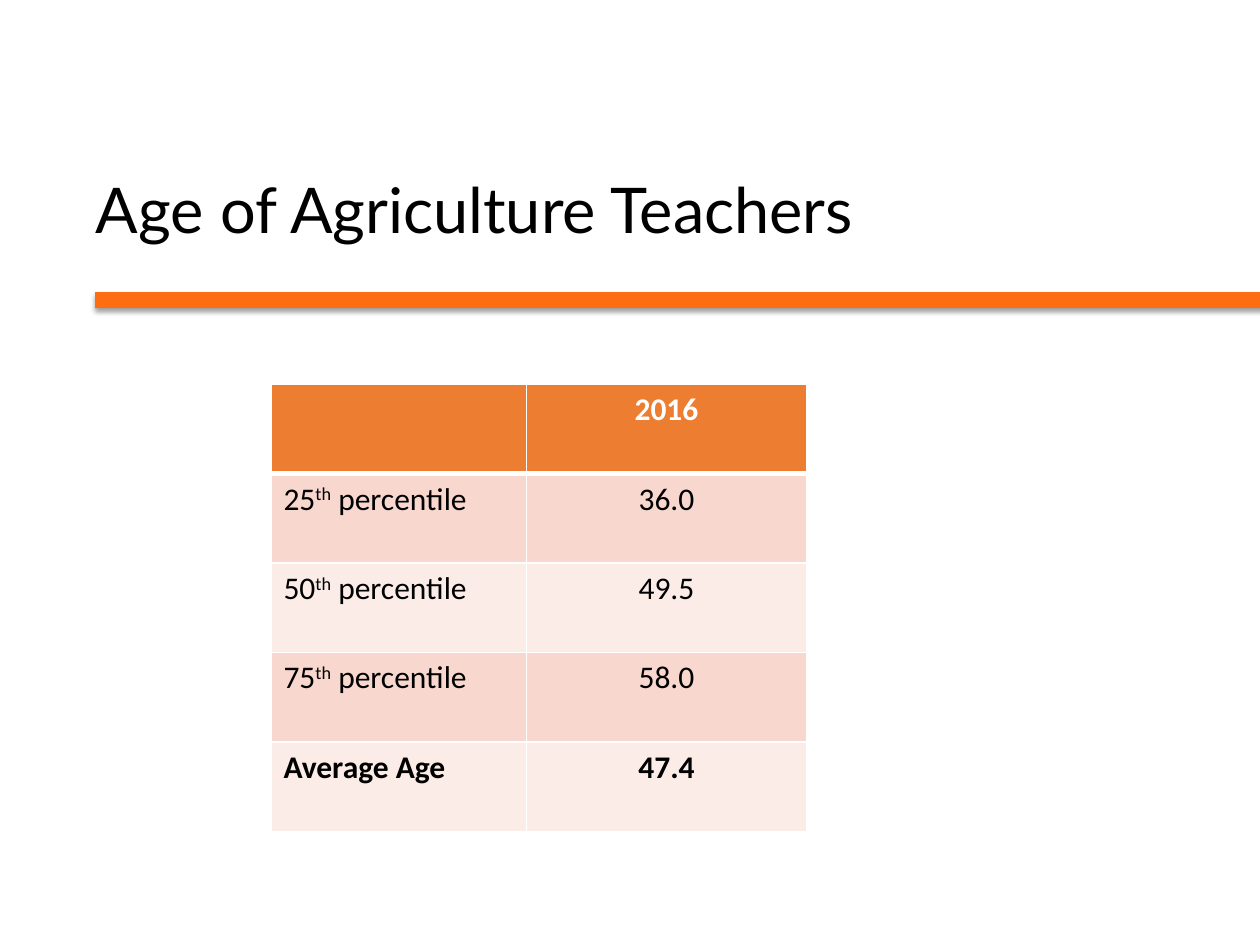
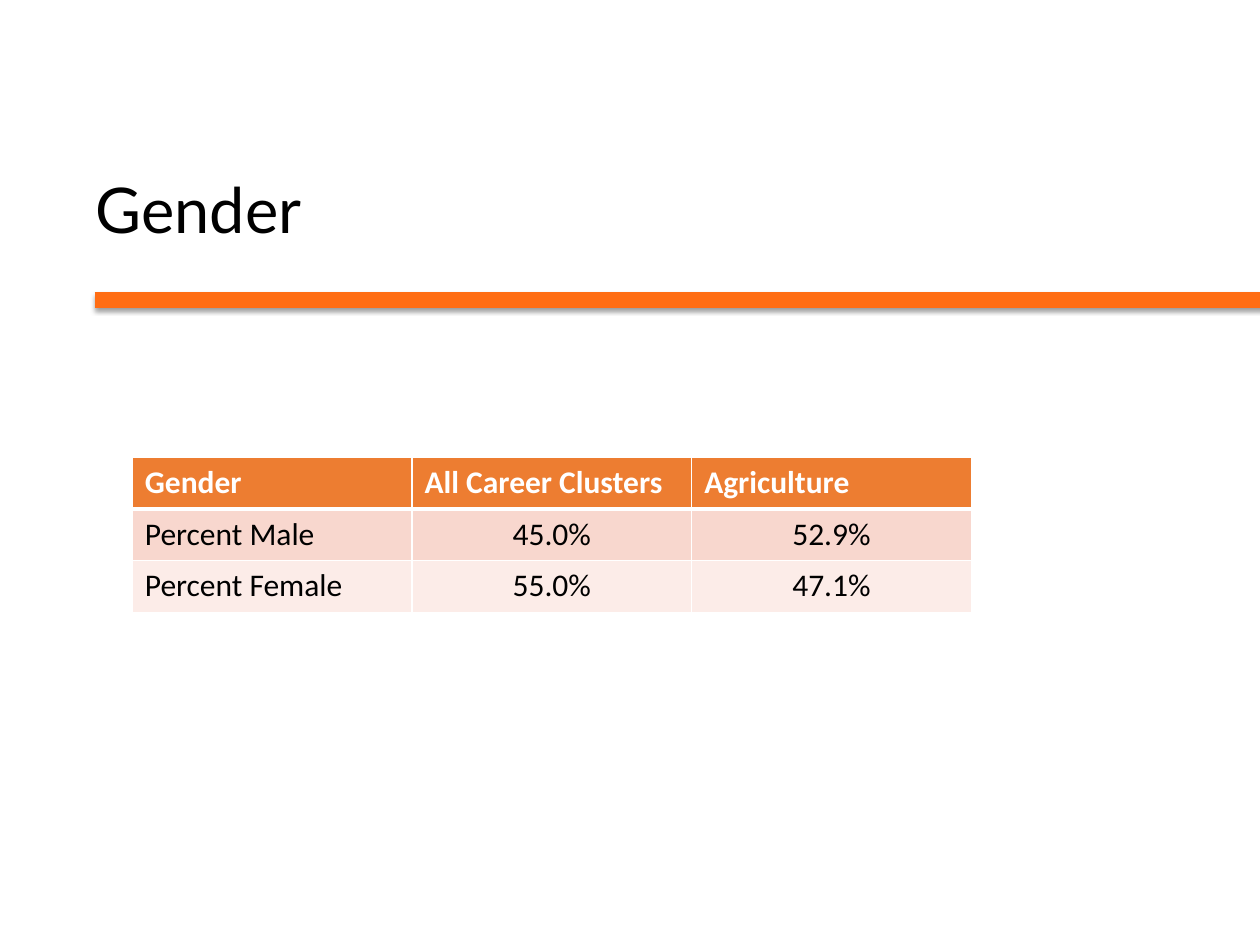
from lxml import etree
from pptx import Presentation
from pptx import util as u
from pptx.dml import color
from pptx.enum import shapes, text
from pptx.oxml import parse_xml
from pptx.oxml.ns import nsdecls, qn


def rgb(value):
    return color.RGBColor.from_string(value)


class Deck:
    title_font, body_font = "Lato", "Calibri"
    black, white, rule_color = "000000", "FFFFFF", "FF6D13"
    header_fill, band_fills = "ED7D31", ("F8D7CE", "FCECE8")

    def __init__(self):
        self.prs = Presentation()
        self.prs.slide_width = u.Inches(10)
        self.prs.slide_height = u.Inches(7.5)
        self.s = None

    def slide(self, title):
        self.s = self.prs.slides.add_slide(self.prs.slide_layouts[5])
        self.title(title)
        self.rule()

    def title(self, title):
        sp = self.s.shapes.title
        sp.left, sp.top = u.Inches(0.66), u.Inches(1.05)
        sp.width, sp.height = u.Inches(6.73), u.Inches(1.25)
        tf = sp.text_frame
        tf.text = title
        tf.word_wrap = True
        tf.auto_size = text.MSO_AUTO_SIZE.NONE
        tf.vertical_anchor = text.MSO_ANCHOR.MIDDLE
        p = tf.paragraphs[0]
        p.alignment = text.PP_ALIGN.LEFT
        p.line_spacing = u.Pt(40)
        self.style(p.runs[0], self.title_font, 36, self.black)

    def rule(self):
        y = u.Inches(2.38)
        line = self.s.shapes.add_connector(
            shapes.MSO_CONNECTOR.STRAIGHT, u.Inches(0.75), y, u.Inches(10.1), y)
        line.line.color.rgb = rgb(self.rule_color)
        line.line.width = u.Pt(9)
        line._element.spPr.append(parse_xml(
            f'<a:effectLst {nsdecls("a")}>'
            f'<a:outerShdw blurRad="{u.Pt(3.1)}" dist="{u.Pt(1.6)}" dir="5400000" rotWithShape="0">'
            f'<a:srgbClr val="{self.black}"><a:alpha val="38000"/></a:srgbClr>'
            '</a:outerShdw></a:effectLst>'))

    def style(self, r, font, size, hue, bold=False):
        r.font.name, r.font.size, r.font.bold = font, u.Pt(size), bold
        r.font.color.rgb = rgb(hue)

    def borders(self, cell, top, bottom):
        tc_pr = cell._tc.get_or_add_tcPr()
        for side, width in (("L", 1), ("R", 1), ("T", top), ("B", bottom)):
            ln = etree.SubElement(tc_pr, qn(f"a:ln{side}"), w=str(u.Pt(width)))
            fill = etree.SubElement(ln, qn("a:solidFill"))
            etree.SubElement(fill, qn("a:srgbClr"), val=self.white)

    def cell(self, cell, content, fill, hue, bold, centered):
        cell.fill.solid()
        cell.fill.fore_color.rgb = rgb(fill)
        p = cell.text_frame.paragraphs[0]
        p.alignment = text.PP_ALIGN.CENTER if centered else text.PP_ALIGN.LEFT
        p.font.size = u.Pt(18)
        for i, part in enumerate(content.split("^")):
            if not part:
                continue
            r = p.add_run()
            r.text = part
            self.style(r, self.body_font, 18, hue, bold)
            if i == 1:
                r.font._element.set("baseline", "30000")

    def table(self, left, top, col_widths, row_height, rows,
              center_header=False, bold_last=False):
        frame = self.s.shapes.add_table(
            len(rows), len(col_widths), u.Inches(left), u.Inches(top),
            u.Inches(sum(col_widths)), u.Inches(row_height * len(rows)))
        table = frame.table
        table.first_row = table.horz_banding = False
        for col, width in zip(table.columns, col_widths):
            col.width = u.Inches(width)
        for i, row in enumerate(rows):
            table.rows[i].height = u.Inches(row_height)
            header = i == 0
            fill = self.header_fill if header else self.band_fills[(i - 1) % 2]
            bold = header or (bold_last and i == len(rows) - 1)
            for j, content in enumerate(row):
                cell = table.cell(i, j)
                self.borders(cell, 3 if i == 1 else 1, 3 if header else 1)
                self.cell(cell, content, fill, self.white if header else self.black,
                          bold, j > 0 and (center_header or not header))


def main():
    deck = Deck()

    deck.slide("Age of Agriculture Teachers")
    deck.table(2.15, 3.05, (2.03, 2.22), 0.71, [
        ("", "2016"),
        ("25^th^ percentile", "36.0"),
        ("50^th^ percentile", "49.5"),
        ("75^th^ percentile", "58.0"),
        ("Average Age", "47.4"),
    ], center_header=True, bold_last=True)

    deck.slide("Gender")
    deck.table(1.05, 3.63, (2.22,) * 3, 0.41, [
        ("Gender", "All Career Clusters", "Agriculture"),
        ("Percent Male", "45.0%", "52.9%"),
        ("Percent Female", "55.0%", "47.1%"),
    ])

    deck.prs.save("out.pptx")


if __name__ == "__main__":
    main()
